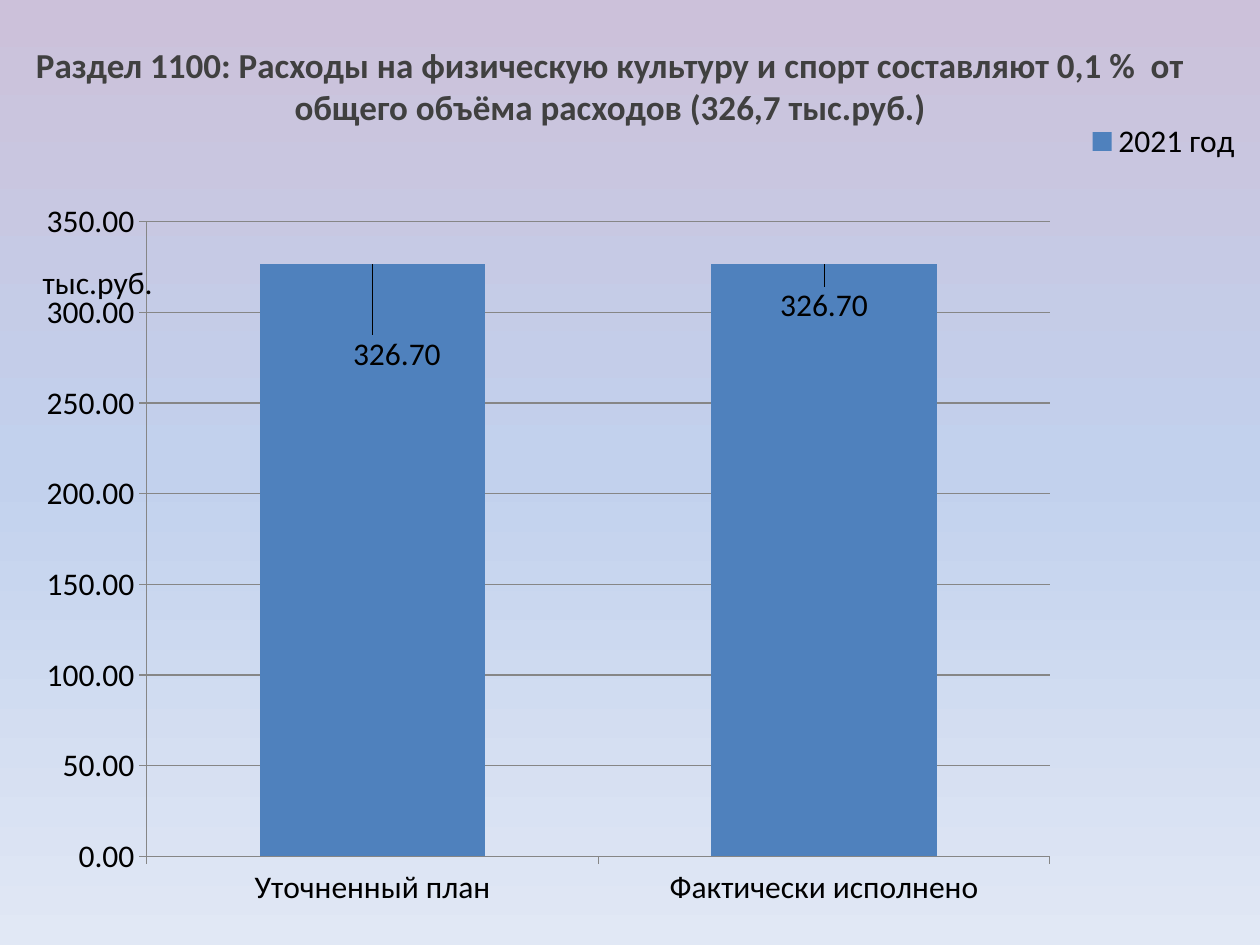
from copy import deepcopy

from lxml import etree
from pptx import Presentation
from pptx.chart.data import CategoryChartData
from pptx.dml.color import RGBColor
from pptx.enum.chart import XL_CHART_TYPE, XL_LABEL_POSITION, XL_LEGEND_POSITION, XL_TICK_MARK
from pptx.enum.text import MSO_ANCHOR, PP_ALIGN
from pptx.oxml.ns import qn
from pptx.util import Cm, Pt

COLUMN = XL_CHART_TYPE.COLUMN_CLUSTERED
OUTSIDE_END = XL_LABEL_POSITION.OUTSIDE_END
CORNER = XL_LEGEND_POSITION.CORNER
TICK_OUT = XL_TICK_MARK.OUTSIDE
CENTER = PP_ALIGN.CENTER
TOP = MSO_ANCHOR.TOP

FONT = "Calibri"
NUMBER_FORMAT = "#,##0.00"
COLORS = {
    "bg_top": "CCC1DA",
    "bg_middle": "C2D1ED",
    "bg_bottom": "E1E8F5",
    "heading": "404040",
    "text": "000000",
    "bar": "4F81BD",
    "line": "868686",
}


def rgb(name):
    return RGBColor.from_string(COLORS[name])


def format_font(font, size=18, color="text", bold=False):
    font.name = FONT
    font.size = Pt(size)
    font.bold = bold
    font.color.rgb = rgb(color)


def write_text(tf, text, align=CENTER, **font_format):
    p = tf.paragraphs[0]
    p.alignment = align
    r = p.add_run()
    r.text = text
    format_font(r.font, **font_format)


def set_background(s):
    fill = s.background.fill
    fill.gradient()
    fill.gradient_angle = 270
    last = fill.gradient_stops[-1]._gs
    last.addnext(deepcopy(last))
    names = ("bg_top", "bg_middle", "bg_bottom")
    for stop, name, position in zip(fill.gradient_stops, names, (0, 0.5, 1)):
        stop.color.rgb = rgb(name)
        stop.position = position


def add_heading(s, text):
    s.shapes.title.element.getparent().remove(s.shapes.title.element)
    sp = s.placeholders[1]
    sp.left, sp.top, sp.width, sp.height = Cm(0.3), Cm(0.74), Cm(24), Cm(1.4)
    tf = sp.text_frame
    tf.word_wrap = True
    tf.vertical_anchor = TOP
    write_text(tf, text, size=20, color="heading", bold=True)


def set_layout(element, index, **values):
    """Place a chart part by hand, in fractions of the chart size."""
    for old in element.findall(qn("c:layout")):
        element.remove(old)
    layout = etree.Element(qn("c:layout"))
    manual = etree.SubElement(layout, qn("c:manualLayout"))
    for tag, value in values.items():
        etree.SubElement(manual, qn(f"c:{tag}")).set("val", str(value))
    element.insert(index, layout)


def format_axis(axis):
    axis.major_tick_mark = TICK_OUT
    axis.format.line.color.rgb = rgb("line")
    format_font(axis.tick_labels.font)


def add_labels(series, offsets):
    labels = series.data_labels
    labels.show_value = True
    labels.number_format = NUMBER_FORMAT
    labels.number_format_is_linked = False
    format_font(labels.font)
    for i, (x, y) in enumerate(offsets):
        label = series.points[i].data_label
        format_font(label.font)
        label.position = OUTSIDE_END
        set_layout(labels._element.findall(qn("c:dLbl"))[i], 1, x=x, y=y)


def add_spending_chart(s):
    data = CategoryChartData(number_format=NUMBER_FORMAT)
    data.categories = ["Уточненный план", "Фактически исполнено"]
    data.add_series("2021 год", (326.7, 326.7))
    chart = s.shapes.add_chart(COLUMN, Cm(0.5), Cm(2.34), Cm(24.6), Cm(16.4), data).chart
    format_font(chart.font)

    chart.has_title = True
    title = chart.chart_title
    write_text(title.text_frame, "тыс.руб.")
    title._element.find(qn("c:overlay")).set("val", "1")
    set_layout(title._element, 1, xMode="edge", yMode="edge", x=0.01, y=0.17)

    chart.has_legend = True
    chart.legend.position = CORNER
    chart.legend.include_in_layout = False
    format_font(chart.legend.font)

    format_axis(chart.category_axis)
    values = chart.value_axis
    format_axis(values)
    values.minimum_scale, values.maximum_scale, values.major_unit = 0, 350, 50
    values.tick_labels.number_format = NUMBER_FORMAT
    values.tick_labels.number_format_is_linked = False
    values.major_gridlines.format.line.color.rgb = rgb("line")

    plot = chart.plots[0]
    plot.gap_width = 100
    plot.vary_by_categories = False
    series = plot.series[0]
    series.format.fill.solid()
    series.format.fill.fore_color.rgb = rgb("bar")
    add_labels(series, [(0.02, 0.14), (0, 0.08)])

    plot_area = chart._chartSpace.chart.plotArea
    set_layout(plot_area, 0, layoutTarget="inner", xMode="edge", yMode="edge",
               x=0.1, y=0.13, w=0.74, h=0.78)


def main():
    prs = Presentation()
    prs.slide_width, prs.slide_height = Cm(25.4), Cm(19.05)
    s = prs.slides.add_slide(prs.slide_layouts[0])
    set_background(s)
    add_heading(s, "Раздел 1100: Расходы на физическую культуру и спорт составляют 0,1 %  от "
                   "общего объёма расходов (326,7 тыс.руб.)")
    add_spending_chart(s)
    prs.save("out.pptx")


if __name__ == "__main__":
    main()
